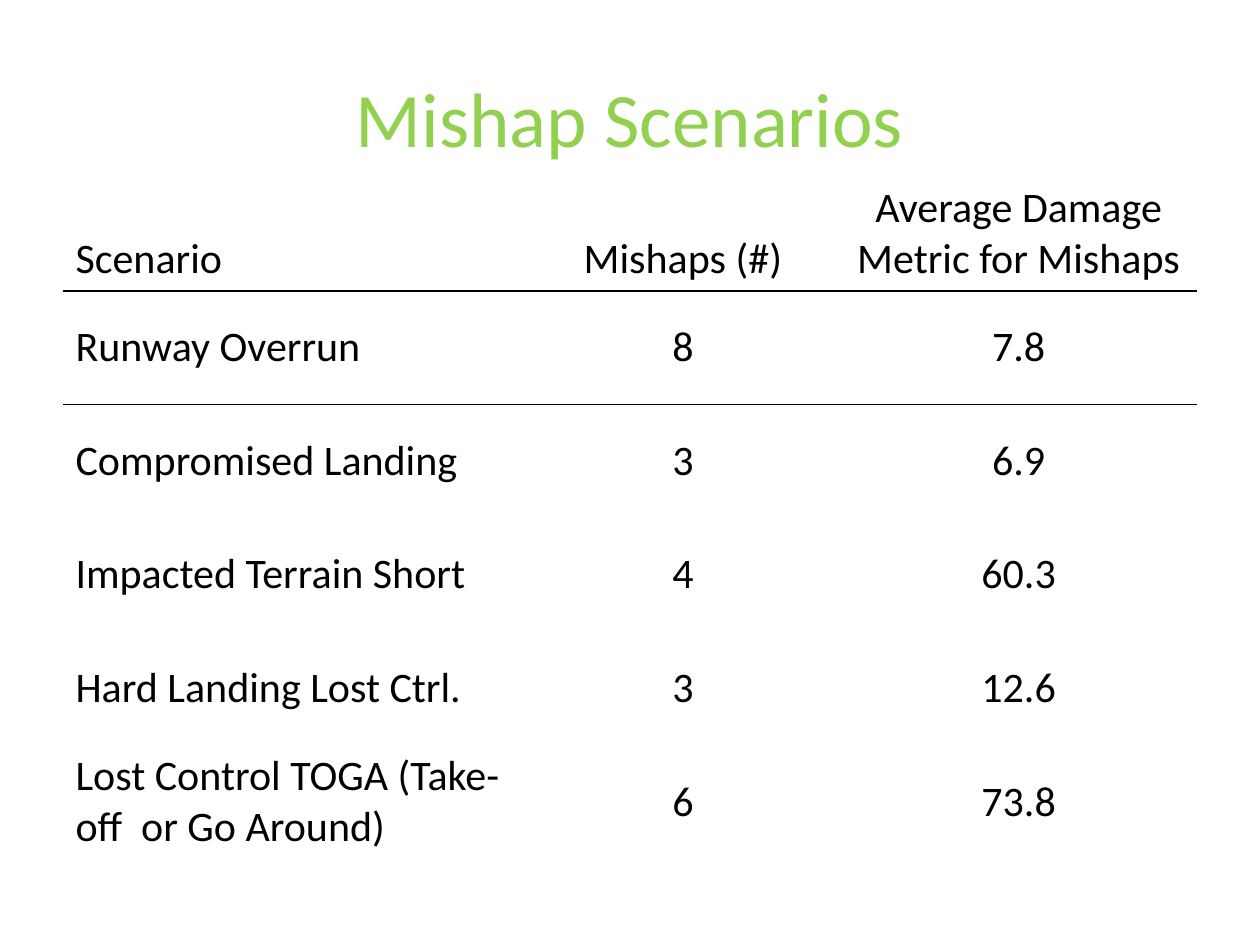
from lxml.etree import SubElement
from pptx import Presentation
from pptx.dml.color import RGBColor
from pptx.enum.text import MSO_ANCHOR as ANCHOR, PP_ALIGN as ALIGN
from pptx.oxml.ns import qn
from pptx.util import Inches, Pt

COLORS = {"title": "92D050", "text": "000000", "rule": "000000"}
FONT = "Calibri"
NO_STYLE = "{2D5ABB26-0587-4C30-8999-92F81FD0307C}"
COL_SHARES = (3.67, 2.5, 2.83)
ROW_SHARES = (0.98, 0.9, 0.9, 0.9, 0.9, 0.9)
SCENARIOS = [
    ("Scenario", "Mishaps (#)", "Average Damage Metric for Mishaps"),
    ("Runway Overrun", "8", "7.8"),
    ("Compromised Landing", "3", "6.9"),
    ("Impacted Terrain Short", "4", "60.3"),
    ("Hard Landing Lost Ctrl.", "3", "12.6"),
    ("Lost Control TOGA (Take-off  or Go Around)", "6", "73.8"),
]
# Cell edges that carry a rule, by row
RULES = {0: ["lnB"], 1: ["lnT", "lnB"]}


def write(tf, text, size=24, color="text", align=ALIGN.LEFT):
    p = tf.paragraphs[0]
    p.alignment = align
    r = p.add_run()
    r.text = text
    r.font.name = FONT
    r.font.size = Pt(size)
    r.font.color.rgb = RGBColor.from_string(COLORS[color])


def add_rule(cell, edge, width=1):
    ln = SubElement(cell._tc.get_or_add_tcPr(), qn(f"a:{edge}"), w=str(Pt(width)))
    fill = SubElement(ln, qn("a:solidFill"))
    SubElement(fill, qn("a:srgbClr"), val=COLORS["rule"])


def place_title(s, box, text):
    sp = s.shapes.title
    sp.left, sp.top, sp.width, sp.height = box
    sp.text_frame.vertical_anchor = ANCHOR.MIDDLE
    write(sp.text_frame, text, size=44, color="title", align=ALIGN.CENTER)


def place_table(s, box, rows):
    width, height = box[2:]
    table = s.shapes.add_table(len(rows), len(rows[0]), *box).table
    table.horz_banding = False
    table._tbl.tblPr.find(qn("a:tableStyleId")).text = NO_STYLE

    # Columns and rows share the box
    for col, share in zip(table.columns, COL_SHARES):
        col.width = int(width * share / sum(COL_SHARES))
    for row, share in zip(table.rows, ROW_SHARES):
        row.height = int(height * share / sum(ROW_SHARES))

    # Labels on the left, figures centred
    for i, values in enumerate(rows):
        for j, value in enumerate(values):
            cell = table.cell(i, j)
            cell.vertical_anchor = ANCHOR.MIDDLE if i else ANCHOR.BOTTOM
            for edge in RULES.get(i, []):
                add_rule(cell, edge)
            cell.fill.background()
            write(cell.text_frame, value, align=ALIGN.CENTER if j else ALIGN.LEFT)


def main():
    prs = Presentation()
    prs.slide_width, prs.slide_height = Inches(10), Inches(7.5)
    s = prs.slides.add_slide(prs.slide_layouts[5])
    margin = int(prs.slide_width * 0.05)
    content = prs.slide_width - 2 * margin
    place_title(s, (margin, Inches(0.3), content, Inches(1.25)), "Mishap Scenarios")
    place_table(s, (margin, Inches(1.33), content, Inches(5.48)), SCENARIOS)
    prs.save("out.pptx")


if __name__ == "__main__":
    main()
